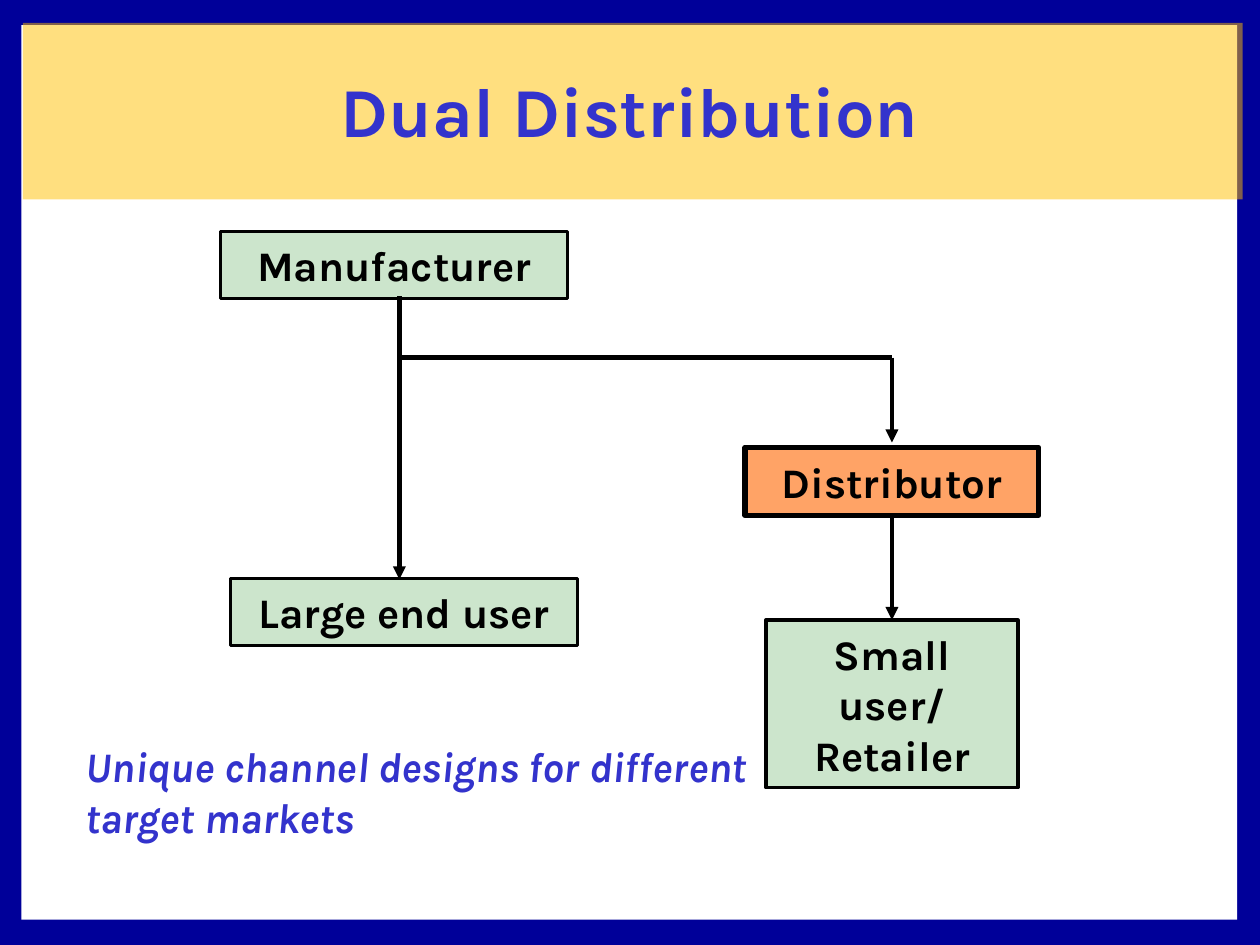
import pptx
import pptx.util
import pptx.dml.color
import pptx.enum.shapes
import pptx.enum.text
import pptx.oxml
import pptx.oxml.ns

Cm, Pt = pptx.util.Cm, pptx.util.Pt
rgb = pptx.dml.color.RGBColor.from_string
qn = pptx.oxml.ns.qn
align = pptx.enum.text.PP_ALIGN
colors = {
    "frame": "000099", "page": "FFFFFF", "band": "FFC000", "blue": "3333CC",
    "green": "008000", "orange": "FF6600", "black": "000000",
}


def add_box(place, color, alpha=100):
    """Add a borderless rectangle; alpha is its opacity in percent."""
    box = slide.shapes.add_shape(
        pptx.enum.shapes.MSO_SHAPE.RECTANGLE, *[Cm(n) for n in place])
    box.shadow.inherit = False
    box.fill.solid()
    box.fill.fore_color.rgb = rgb(colors[color])
    if alpha < 100:
        tint = box.fill._xPr.find(qn("a:solidFill"))[0]
        tint.append(pptx.oxml.parse_xml(
            '<a:alpha xmlns:a="http://schemas.openxmlformats.org/drawingml/2006/main"'
            f' val="{alpha * 1000}"/>'))
    box.line.fill.background()
    return box


def set_text(shape, text, size, color, side):
    frame = shape.text_frame
    frame.text = text
    frame.word_wrap = True
    para = frame.paragraphs[0]
    para.alignment = side
    font = para.runs[0].font
    font.name, font.size, font.bold = "Karla", Pt(size), True
    font.color.rgb = rgb(colors[color])
    return font


deck = pptx.Presentation()
deck.slide_width, deck.slide_height = Cm(25.4), Cm(19.05)
slide = deck.slides.add_slide(deck.slide_layouts[5])

# Frame, page and title band
add_box((0, 0, 25.4, 19.05), "frame")
add_box((0.43, 0.51, 24.51, 18.03), "page")
add_box((0.46, 0.46, 24.59, 3.56), "band", 50)

# The title goes in front of the band
title = slide.shapes.title
title.left, title.top, title.width, title.height = Cm(0.84), Cm(0.84), Cm(23.7), Cm(2.74)
title.text_frame.vertical_anchor = pptx.enum.text.MSO_ANCHOR.MIDDLE
set_text(title, "Dual Distribution", 40, "blue", align.CENTER)
slide.shapes._spTree.append(title._element)

# Channel members
nodes = {}
for text, place, color, alpha, width in [
    ("Manufacturer", (4.45, 4.67, 6.99, 1.35), "green", 20, 2),
    ("Small user/ Retailer", (15.44, 12.5, 5.08, 3.38), "green", 20, 2),
    ("Large end user", (4.65, 11.66, 6.99, 1.35), "green", 20, 2),
    ("Distributor", (15.02, 9.02, 5.92, 1.37), "orange", 60, 3),
]:
    box = add_box(place, color, alpha)
    box.line.color.rgb = rgb(colors["black"])
    box.line.width = Pt(width)
    set_text(box, text, 24, "black", align.CENTER)
    nodes[text] = box

# Flows: left column, branch, right column
left, right, fork = 8.05, 17.98, 7.21
for ends, arrow, join in [
    ((left, 5.97, left, 11.68), True, None),
    ((left, fork, right, fork), False, None),
    ((right, fork, right, 8.92), True, None),
    ((right, 10.39, right, 12.5), True, ("Distributor", "Small user/ Retailer")),
]:
    flow = slide.shapes.add_connector(
        pptx.enum.shapes.MSO_CONNECTOR.STRAIGHT, *[Cm(n) for n in ends])
    flow.line.color.rgb = rgb(colors["black"])
    flow.line.width = Pt(2.5)
    if arrow:
        pptx.oxml.ns  # namespace helper used through qn
        head = flow.line._get_or_add_ln().makeelement(qn("a:tailEnd"), {"type": "triangle"})
        flow.line._get_or_add_ln().append(head)
    props = flow._element.spPr
    props.append(props.makeelement(qn("a:effectLst"), {}))
    if join:
        flow.begin_connect(nodes[join[0]], 2)
        flow.end_connect(nodes[join[1]], 0)

note = slide.shapes.add_textbox(Cm(1.48), Cm(14.81), Cm(15.67), Cm(2.31))
font = set_text(note, "Unique channel designs for different target markets",
                24, "blue", align.LEFT)
font.italic = True

deck.save("out.pptx")
